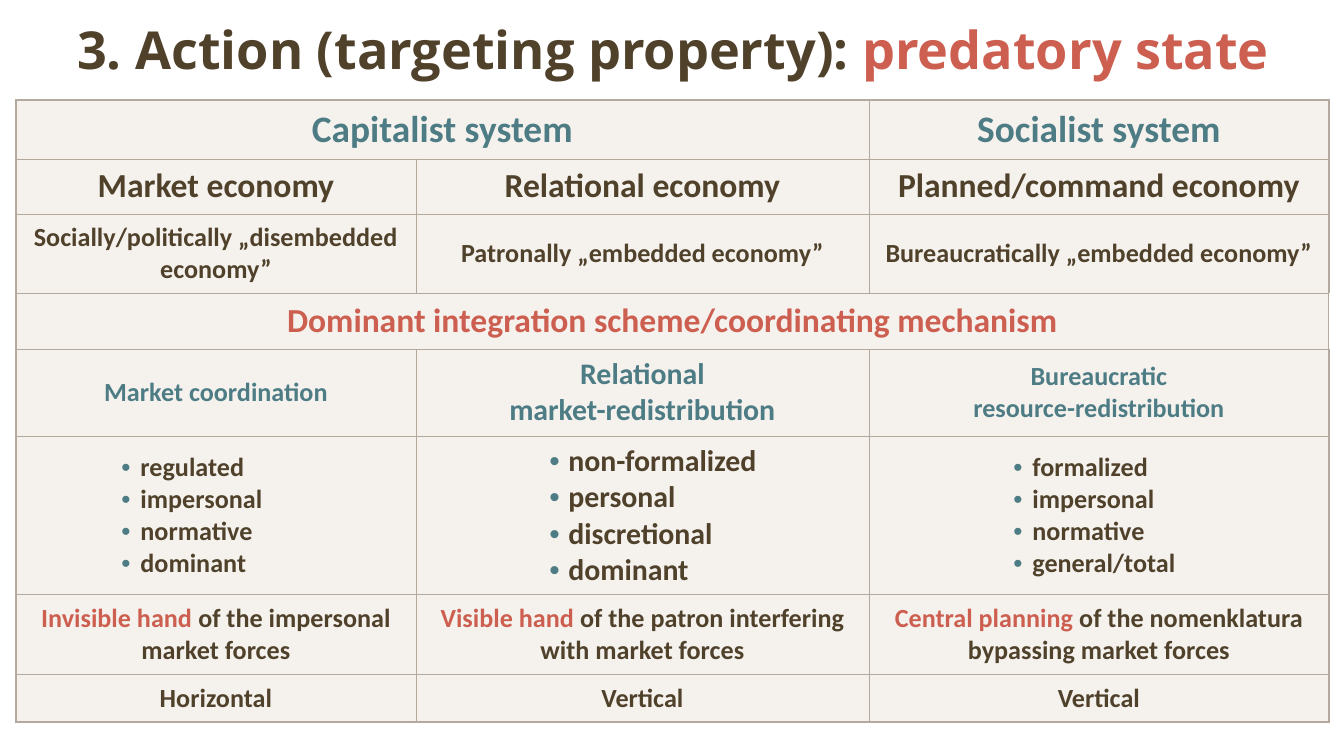
from lxml.etree import SubElement
from pptx import Presentation
from pptx.dml.color import RGBColor
from pptx.enum.text import MSO_ANCHOR, PP_ALIGN
from pptx.oxml import parse_xml
from pptx.oxml.ns import nsdecls, qn
from pptx.util import Emu, Pt

BROWN, TEAL, RED = "50412B", "4D7C85", "CD5F50"
CELL_FILL, BORDER = "EFEAE4", "B3A99D"
HANGING = 19


def px(length):
    return Emu(round(length * 914400 / 134.4))


def color(value):
    return RGBColor.from_string(value)


class SlideBuilder:
    title_font = "Open Sans"
    body_font = "Calibri"

    def __init__(self, page):
        self.page = page

    def add_spans(self, para, spans, name, size):
        """Fill a paragraph with (text, colour) spans in one bold font."""
        para.font.name, para.font.size, para.font.bold = name, Pt(size), True
        for text, tint in spans:
            span = para.add_run()
            span.text = text
            span.font.color.rgb = color(tint)

    def title(self, left, top, width, height, spans):
        box = self.page.shapes.add_textbox(px(left), px(top), px(width), px(height))
        frame = box.text_frame
        frame.word_wrap = True
        frame.vertical_anchor = MSO_ANCHOR.MIDDLE
        para = frame.paragraphs[0]
        para.alignment = PP_ALIGN.CENTER
        self.add_spans(para, spans, self.title_font, 28)

    def table(self, left, top, widths, heights):
        frame = self.page.shapes.add_table(
            len(heights), len(widths), px(left), px(top),
            px(sum(widths)), px(sum(heights)))
        table = frame.table
        table.first_row = table.horz_banding = False
        for column, width in zip(table.columns, widths):
            column.width = px(width)
        for row, height in zip(table.rows, heights):
            row.height = px(height)
        last_row, last_column = len(heights) - 1, len(widths) - 1
        for r in range(len(heights)):
            for c in range(len(widths)):
                self.style_cell(table.cell(r, c), {
                    "lnL": c == 0, "lnR": c == last_column,
                    "lnT": r == 0, "lnB": r == last_row})
        return table

    def style_cell(self, cell, outer_sides):
        """Translucent fill, with thicker borders on the table's outside."""
        cell.vertical_anchor = MSO_ANCHOR.MIDDLE
        cell.fill.solid()
        cell.fill.fore_color.rgb = color(CELL_FILL)
        properties = cell._tc.get_or_add_tcPr()
        tint = properties.find(qn("a:solidFill")).find(qn("a:srgbClr"))
        SubElement(tint, qn("a:alpha")).set("val", "60000")
        for position, (side, outer) in enumerate(outer_sides.items()):
            width = Pt(1) if outer else Pt(0.5)
            properties.insert(position, parse_xml(
                f'<a:{side} {nsdecls("a")} w="{width}"><a:solidFill>'
                f'<a:srgbClr val="{BORDER}"/></a:solidFill></a:{side}>'))

    def cell_lines(self, cell, lines, size, bullet_indent=None):
        """Add one paragraph per list of spans, centred or bulleted."""
        frame = cell.text_frame
        for number, spans in enumerate(lines):
            para = frame.add_paragraph() if number else frame.paragraphs[0]
            if bullet_indent is None:
                para.alignment = PP_ALIGN.CENTER
            else:
                self.bullet(para, bullet_indent)
            self.add_spans(para, spans, self.body_font, size)

    def bullet(self, para, indent):
        properties = para._p.get_or_add_pPr()
        properties.set("marL", str(px(indent)))
        properties.set("indent", str(px(-HANGING)))
        tint = SubElement(properties, qn("a:buClr"))
        SubElement(tint, qn("a:srgbClr")).set("val", TEAL)
        SubElement(properties, qn("a:buFont")).set("typeface", "Arial")
        SubElement(properties, qn("a:buChar")).set("char", "•")


def main():
    deck = Presentation()
    deck.slide_width, deck.slide_height = px(1344), px(756)
    builder = SlideBuilder(deck.slides.add_slide(deck.slide_layouts[6]))

    # Title
    builder.title(22, 8, 1302, 82, [
        ("3. Action (targeting property): ", BROWN), ("predatory state", RED)])

    # Table grid and merged headings
    table = builder.table(16, 100, [400, 453, 460],
                          [59, 55, 79, 56, 87, 159, 80, 47])
    table.cell(0, 0).merge(table.cell(0, 1))
    table.cell(3, 0).merge(table.cell(3, 2))

    # Centred single-colour cells: row, size, colour, text by column
    plain_rows = [
        (0, 20, TEAL, {0: "Capitalist system", 2: "Socialist system"}),
        (1, 18, BROWN, {0: "Market economy", 1: "Relational economy",
                        2: "Planned/command economy"}),
        (2, 14, BROWN, {0: "Socially/politically „disembedded economy”",
                        1: "Patronally „embedded economy”",
                        2: "Bureaucratically „embedded economy”"}),
        (3, 18, RED, {0: "Dominant integration scheme/coordinating mechanism"}),
        (4, 14, TEAL, {0: "Market coordination",
                       2: "Bureaucratic\nresource-redistribution"}),
        (4, 16, TEAL, {1: "Relational\nmarket-redistribution"}),
        (7, 14, BROWN, {0: "Horizontal", 1: "Vertical", 2: "Vertical"}),
    ]
    for row, size, tint, texts in plain_rows:
        for column, text in texts.items():
            lines = [[(line, tint)] for line in text.split("\n")]
            builder.cell_lines(table.cell(row, column), lines, size)

    # Bulleted traits: size, indent, words
    traits = [
        (14, 111, ["regulated", "impersonal", "normative", "dominant"]),
        (16, 139, ["non-formalized", "personal", "discretional", "dominant"]),
        (14, 150, ["formalized", "impersonal", "normative", "general/total"]),
    ]
    for column, (size, indent, words) in enumerate(traits):
        lines = [[(word, BROWN)] for word in words]
        builder.cell_lines(table.cell(5, column), lines, size, indent)

    # Coordinating forces with a highlighted opening
    forces = [
        ("Invisible hand ", "of the impersonal market forces"),
        ("Visible hand ", "of the patron interfering with market forces"),
        ("Central planning ", "of the nomenklatura bypassing market forces"),
    ]
    for column, (opening, rest) in enumerate(forces):
        builder.cell_lines(table.cell(6, column),
                           [[(opening, RED), (rest, BROWN)]], 14)

    deck.save("out.pptx")


if __name__ == "__main__":
    main()
